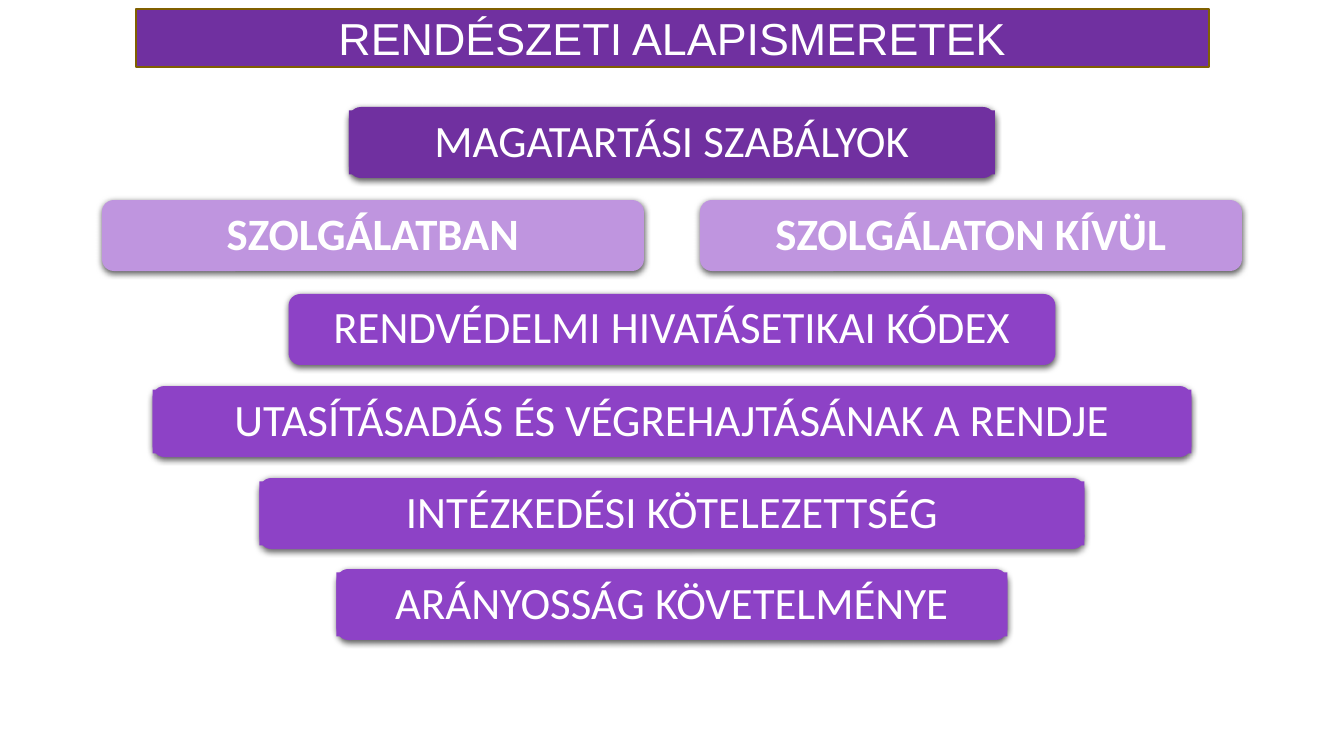
from lxml import etree
from pptx import Presentation
from pptx.dml.color import RGBColor
from pptx.enum.shapes import MSO_SHAPE
from pptx.enum.text import MSO_ANCHOR, PP_ALIGN
from pptx.oxml import parse_xml
from pptx.oxml.ns import nsdecls
from pptx.util import Pt

COLORS = {"dark": "7030A0", "mid": "8D42C6", "light": "BF95DF",
          "white": "FFFFFF", "outline": "806000", "shadow": "000000"}
TITLE = "RENDÉSZETI ALAPISMERETEK"
ROWS = [
    (107, 646, "dark", "flat", ["MAGATARTÁSI SZABÁLYOK"]),
    (200, 542, "light", "round", ["SZOLGÁLATBAN", "SZOLGÁLATON KÍVÜL"]),
    (294, 767, "mid", "round", ["RENDVÉDELMI HIVATÁSETIKAI KÓDEX"]),
    (386, 1039, "mid", "flat", ["UTASÍTÁSADÁS ÉS VÉGREHAJTÁSÁNAK A RENDJE"]),
    (478, 825, "mid", "flat", ["INTÉZKEDÉSI KÖTELEZETTSÉG"]),
    (569, 671, "mid", "flat", ["ARÁNYOSSÁG KÖVETELMÉNYE"]),
]
SLIDE_W, SLIDE_H = 1344, 756
BAR_H, FLAT_H, GAP = 71, 64, 56
SHADOW = (f'<a:effectLst {nsdecls("a")}><a:outerShdw blurRad="57150" dist="19050" '
          'dir="5400000" algn="ctr" rotWithShape="0">'
          f'<a:srgbClr val="{COLORS["shadow"]}"><a:alpha val="63000"/></a:srgbClr>'
          '</a:outerShdw></a:effectLst>')


def px(n):
    return round(n * 914400 / 100.8)


def rgb(name):
    return RGBColor.from_string(COLORS[name])


def paint(sp, color):
    sp.fill.solid()
    sp.fill.fore_color.rgb = rgb(color)


def write(sp, text, font, bold=False, spacing=1.0):
    tf = sp.text_frame
    tf.word_wrap = True
    tf.vertical_anchor = MSO_ANCHOR.MIDDLE
    tf.margin_top = tf.margin_bottom = 0
    p = tf.paragraphs[0]
    p.text = text
    p.alignment = PP_ALIGN.CENTER
    p.line_spacing = spacing
    p.font.name, p.font.size, p.font.bold = font, Pt(32), bold
    p.font.color.rgb = rgb("white")


def add_box(s, kind, x, y, w, h, color):
    sp = s.shapes.add_shape(kind, px(x), px(y), px(w), px(h))
    sp.shadow.inherit = False
    sp.line.fill.background()
    paint(sp, color)
    return sp


def add_bar(s, x, y, w, color, style, text):
    sp = add_box(s, MSO_SHAPE.ROUNDED_RECTANGLE, x, y, w, BAR_H, color)
    sp.shadow.inherit = True
    sp._element.spPr.append(parse_xml(SHADOW))
    if style == "flat":
        sp = add_box(s, MSO_SHAPE.RECTANGLE, x, y + (BAR_H - FLAT_H) / 2, w, FLAT_H, color)
    write(sp, text, "Calibri", color == "light", 0.9)


def main():
    prs = Presentation()
    prs.slide_width, prs.slide_height = px(SLIDE_W), px(SLIDE_H)
    s = prs.slides.add_slide(prs.slide_layouts[5])

    title = s.shapes.title
    title.left, title.top, title.width, title.height = px(136), px(9), px(1073), px(58)
    paint(title, "dark")
    title.line.color.rgb = rgb("outline")
    title.line.width = Pt(1)
    write(title, TITLE, "Arial")

    for y, w, color, style, labels in ROWS:
        left = (SLIDE_W - len(labels) * (w + GAP) + GAP) / 2
        for i, text in enumerate(labels):
            add_bar(s, left + i * (w + GAP), y, w, color, style, text)

    prs.save("out.pptx")


if __name__ == "__main__":
    main()
